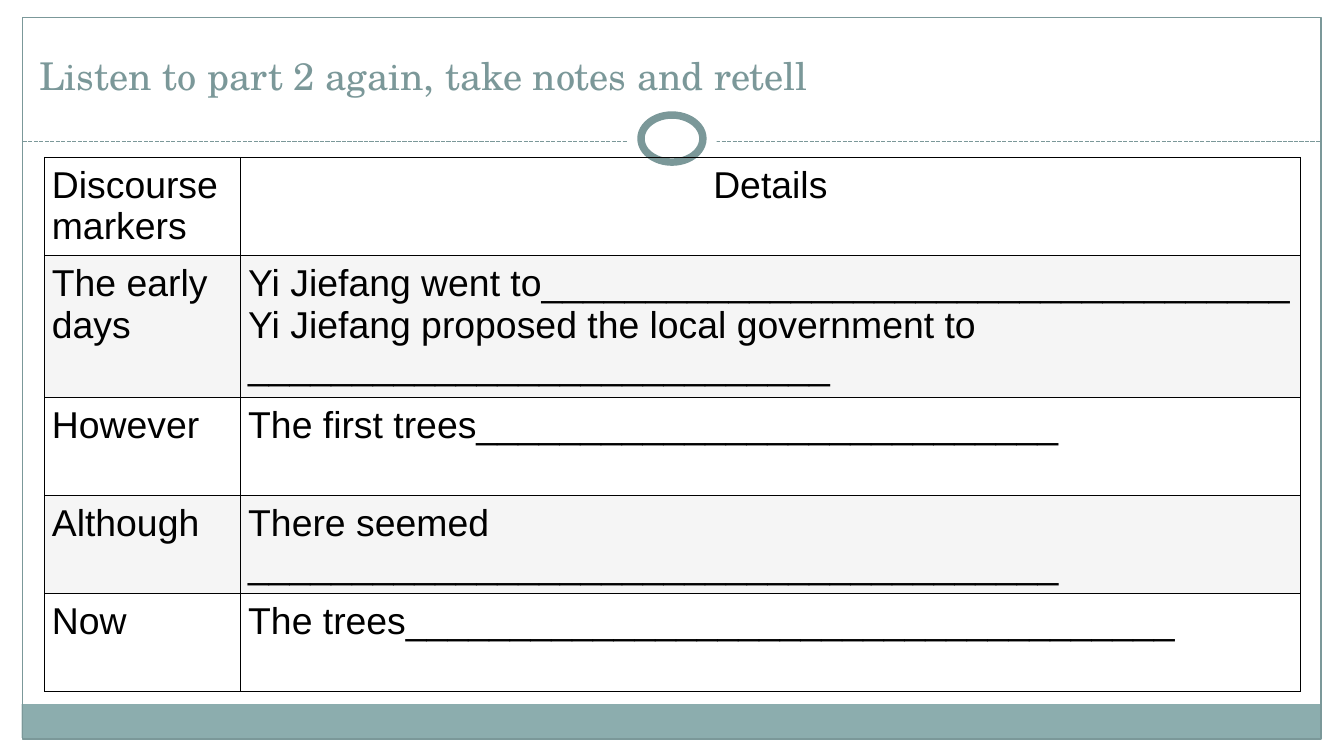
from dataclasses import dataclass

from lxml.etree import SubElement
from pptx import Presentation
from pptx.dml.color import RGBColor
from pptx.enum.dml import MSO_LINE_DASH_STYLE as Dash
from pptx.enum.shapes import MSO_CONNECTOR_TYPE as Link, MSO_SHAPE as Shape
from pptx.enum.text import MSO_ANCHOR as Anchor, MSO_AUTO_SIZE as AutoSize, PP_ALIGN as Align
from pptx.oxml.ns import qn
from pptx.util import Cm, Pt

TITLE = "Listen to part 2 again, take notes and retell"
ROWS = [
    ("Discourse markers", "Details"),
    ("The early days",
     "Yi Jiefang went to____________________________________\n"
     "Yi Jiefang proposed the local government to ____________________________"),
    ("However", "The first trees____________________________"),
    ("Although", "There seemed _______________________________________"),
    ("Now", "The trees_____________________________________"),
]


@dataclass(frozen=True)
class Theme:
    accent: str = "7B9899"
    band: str = "8CADAE"
    paper: str = "FFFFFF"
    stripe: str = "F5F5F5"
    ink: str = "000000"
    title_font: str = "TeX Gyre Schola"
    body_font: str = "Arial"
    title_size: float = 20.5
    body_size: float = 20
    rule: float = 0.75
    ring: float = 4
    border: float = 0.35


THEME = Theme()
SLIDE_SIZE = (25.4, 14.29)
FRAME = (0.43, 0.33, 24.54, 13.64)
BAND = (0.41, 13.31, 24.54, 0.64)
RULE_Y = 2.67
RING_CENTRE = (12.7, 2.62)
GAP_SIZE = (1.7, 1.27)
RING_SIZE = (1.17, 0.89)
TITLE_AREA = (0.41, 0.41, 23.7, 1.57)
TABLE_ORIGIN = (0.84, 2.97)
COLUMNS = (3.71, 20.02)
ROW_HEIGHTS = (1.85, 2.69, 1.85, 1.85, 1.85)
CELL_INSET = 0.14


def colour(value):
    return RGBColor.from_string(value)


def apply(target, values):
    for name, value in values.items():
        setattr(target, name, value)


def style_text(para, font, size, ink):
    for span in para.runs:
        apply(span.font, {"name": font, "size": Pt(size), "bold": False})
        span.font.color.rgb = colour(ink)


def style_line(line, width):
    line.color.rgb = colour(THEME.accent)
    line.width = Pt(width)


def add_box(page, kind, area, fill=None, width=None):
    box = page.shapes.add_shape(kind, *map(Cm, area))
    box.shadow.inherit = False
    if fill:
        box.fill.solid()
        box.fill.fore_color.rgb = colour(fill)
    else:
        box.fill.background()
    if width:
        style_line(box.line, width)
    else:
        box.line.fill.background()


def centred(size):
    return tuple(c - s / 2 for c, s in zip(RING_CENTRE, size)) + size


def add_frame(page):
    add_box(page, Shape.RECTANGLE, BAND, fill=THEME.band)
    add_box(page, Shape.RECTANGLE, FRAME, width=THEME.rule)
    left, _, width, _ = FRAME
    rule = page.shapes.add_connector(
        Link.STRAIGHT, Cm(left), Cm(RULE_Y), Cm(left + width), Cm(RULE_Y))
    style_line(rule.line, THEME.rule)
    rule.line.dash_style = Dash.SQUARE_DOT
    SubElement(rule._element.spPr, qn("a:effectLst"))
    add_box(page, Shape.OVAL, centred(GAP_SIZE), fill=THEME.paper)
    add_box(page, Shape.OVAL, centred(RING_SIZE), fill=THEME.paper, width=THEME.ring)


def format_title(page):
    title = page.shapes.title
    apply(title, dict(zip(("left", "top", "width", "height"), map(Cm, TITLE_AREA))))
    apply(title.text_frame, {
        "text": TITLE, "word_wrap": True, "auto_size": AutoSize.NONE,
        "vertical_anchor": Anchor.BOTTOM, "margin_left": Cm(0.33),
        "margin_right": Cm(0.13), "margin_top": Cm(0.13), "margin_bottom": Cm(0.13),
    })
    para = title.text_frame.paragraphs[0]
    para.alignment = Align.LEFT
    style_text(para, THEME.title_font, THEME.title_size, THEME.accent)


def add_borders(cell):
    properties = cell._tc.get_or_add_tcPr()
    for side in ("lnL", "lnR", "lnT", "lnB"):
        line = SubElement(properties, qn(f"a:{side}"), w=str(Pt(THEME.border)))
        SubElement(SubElement(line, qn("a:solidFill")), qn("a:srgbClr"), val=THEME.ink)


def format_cell(cell, text, striped, align):
    add_borders(cell)
    if striped:
        cell.fill.solid()
        cell.fill.fore_color.rgb = colour(THEME.stripe)
    else:
        cell.fill.background()
    apply(cell, {f"margin_{side}": Cm(CELL_INSET)
                 for side in ("left", "right", "top", "bottom")})
    cell.vertical_anchor = Anchor.TOP
    para = cell.text_frame.paragraphs[0]
    apply(para, {"text": text, "alignment": align})
    style_text(para, THEME.body_font, THEME.body_size, THEME.ink)


def add_notes_table(page):
    table = page.shapes.add_table(
        len(ROWS), len(COLUMNS), *map(Cm, TABLE_ORIGIN),
        Cm(sum(COLUMNS)), Cm(sum(ROW_HEIGHTS))).table
    apply(table, {"first_row": False, "horz_banding": False})
    for column, width in zip(table.columns, COLUMNS):
        column.width = Cm(width)
    for r, (row, height) in enumerate(zip(ROWS, ROW_HEIGHTS)):
        table.rows[r].height = Cm(height)
        for c, text in enumerate(row):
            align = Align.CENTER if (r, c) == (0, 1) else Align.LEFT
            format_cell(table.cell(r, c), text, r % 2 == 1, align)


def main():
    deck = Presentation()
    deck.slide_width, deck.slide_height = map(Cm, SLIDE_SIZE)
    page = deck.slides.add_slide(deck.slide_layouts[5])
    add_frame(page)
    format_title(page)
    add_notes_table(page)
    deck.save("out.pptx")


if __name__ == "__main__":
    main()
